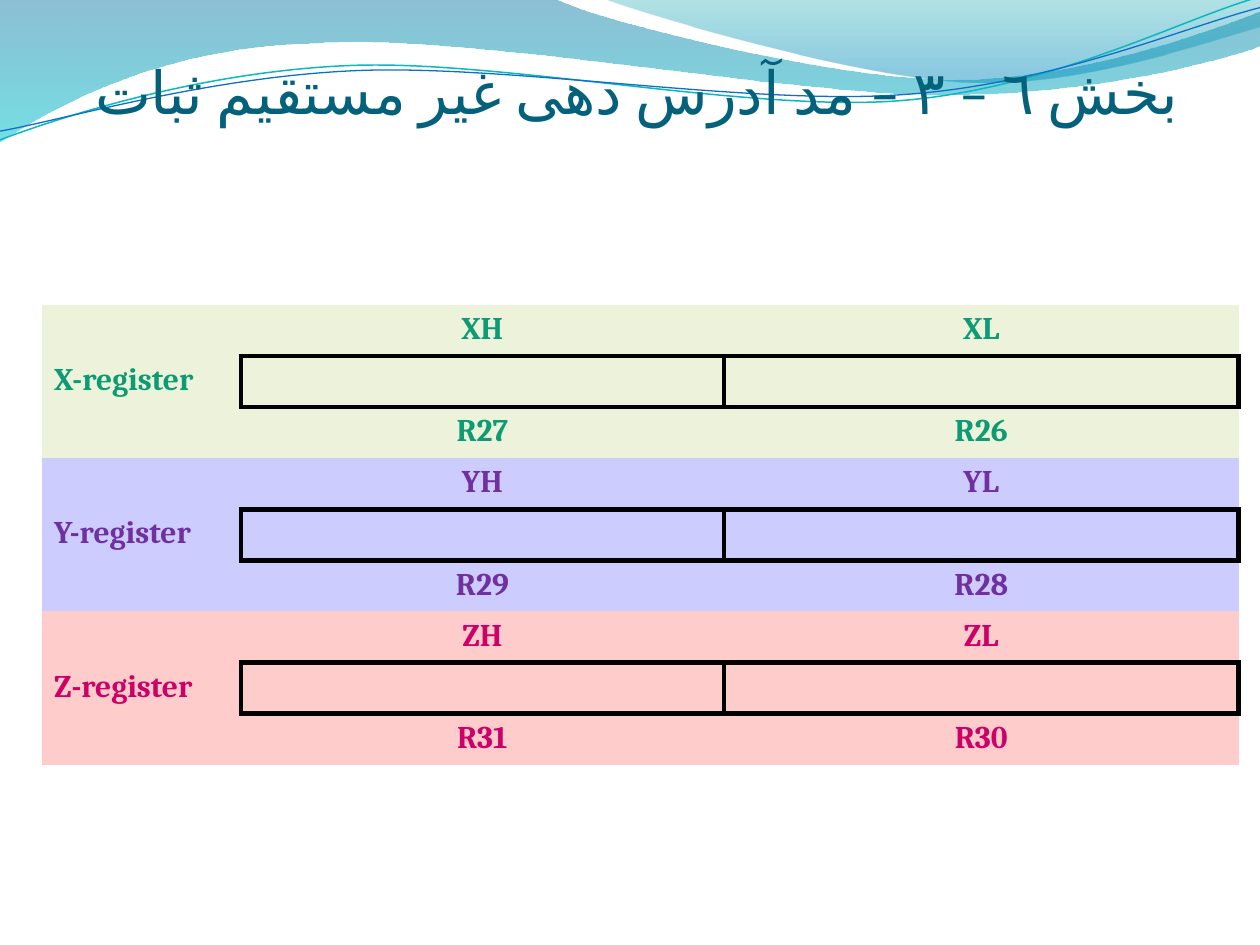
from math import cos, radians, sin

from lxml.etree import SubElement
from pptx import Presentation
from pptx.dml.color import RGBColor
from pptx.enum.text import MSO_ANCHOR, PP_ALIGN
from pptx.oxml.ns import qn
from pptx.util import Inches, Pt

BLACK = RGBColor(0x00, 0x00, 0x00)
TITLE = RGBColor(0x04, 0x61, 0x7B)
CYAN_LINE = RGBColor(0x0A, 0xB8, 0xBF)
BLUE_LINE = RGBColor(0x0F, 0x6F, 0xC6)
DEEP_BLUE = RGBColor(0x00, 0x74, 0xA1)
CYAN = RGBColor(0x00, 0xC6, 0xCF)
TEAL = RGBColor(0x00, 0xA1, 0xA9)
SKY = RGBColor(0x00, 0x8B, 0xBF)

REGISTERS = [
    ("X", "R27", "R26", RGBColor(0x0C, 0x9B, 0x74), RGBColor(0xED, 0xF3, 0xDB)),
    ("Y", "R29", "R28", RGBColor(0x70, 0x30, 0xA0), RGBColor(0xCC, 0xCC, 0xFF)),
    ("Z", "R31", "R30", RGBColor(0xCC, 0x00, 0x66), RGBColor(0xFF, 0xCC, 0xCC)),
]
COLUMN_SHARES = (1.58, 3.83, 4.08)
EDGES = {"a:lnL": (0, -1), "a:lnR": (0, 1), "a:lnT": (-1, 0), "a:lnB": (1, 0)}
CURVE_TILT = -2.7

BACK_WAVE = [
    (0, 0), (4.4, -0.01),
    (4.76, 0.17, 6.64, 0.63, 7.58, 0.63), (8.53, 0.63, 9.58, 0.26, 10, 0.09),
    (10.01, 0.36),
    (9.83, 0.44, 8.7, 0.76, 7.46, 0.75), (6.22, 0.75, 3.82, 0.28, 2.57, 0.34),
    (1.29, 0.36, 0.46, 0.83, -0.01, 1.13), (0, 0),
]
FRONT_WAVE = [
    (4.79, -0.01),
    (5.09, 0.11, 6.82, 0.62, 7.69, 0.65), (8.56, 0.69, 9.61, 0.32, 10, 0.21),
    (10, 0), (4.79, -0.01),
]
CYAN_CURVE = [
    (0, 1.11),
    (0.48, 0.93, 1.58, 0.57, 2.77, 0.52), (3.95, 0.47, 5.93, 0.89, 7.13, 0.8),
    (8.33, 0.71, 9.38, 0.15, 9.98, -0.02),
]
BLUE_CURVE = [
    (0, 1.04),
    (0.47, 0.96, 1.64, 0.61, 2.83, 0.56), (4.03, 0.51, 5.97, 0.84, 7.17, 0.75),
    (8.36, 0.67, 9.41, 0.21, 10, 0.06),
]


def write_text(tf, text, font="Cambria", size=18, color=BLACK, bold=False,
               align=PP_ALIGN.LEFT, lang=None):
    p = tf.paragraphs[0]
    p.alignment = align
    r = p.add_run()
    r.text = text
    r.font.name = font
    r.font.size = Pt(size)
    r.font.bold = bold
    r.font.color.rgb = color
    if lang:
        p._p.get_or_add_pPr().set("rtl", "1")
        rPr = r._r.get_or_add_rPr()
        rPr.set("lang", lang)
        SubElement(rPr, qn("a:cs"), typeface=font)


def turn(point, center, degrees):
    angle = radians(degrees)
    dx, dy = point[0] - center[0], point[1] - center[1]
    return (center[0] + dx * cos(angle) - dy * sin(angle),
            center[1] + dx * sin(angle) + dy * cos(angle))


def add_outline(s, box, segments, close, tilt=0, center=(0, 0)):
    left, top, width, _ = box
    unit = width / 10
    points = [turn(seg[i:i + 2], center, -tilt)
              for seg in segments for i in range(0, len(seg), 2)]
    points = [(left + x * unit, top + y * unit) for x, y in points]
    builder = s.shapes.build_freeform(*points[0], scale=1.0)
    builder.add_line_segments(points[1:], close=close)
    sp = builder.convert_to_shape()
    sp.rotation = tilt
    sp.shadow.inherit = False
    lines = iter(list(sp._element.iter(qn("a:lnTo"))))
    for seg in segments[1:]:
        line = next(lines)
        if len(seg) == 6:
            bezier = line.makeelement(qn("a:cubicBezTo"))
            line.addprevious(bezier)
            for part in (line, next(lines), next(lines)):
                bezier.append(part[0])
                part.getparent().remove(part)
    return sp


def add_wave(s, box, segments, stops):
    sp = add_outline(s, box, segments, close=True)
    sp.line.fill.background()
    sp.fill.gradient()
    sp.fill.gradient_angle = 270
    for stop, (position, color, _) in zip(sp.fill.gradient_stops, stops):
        stop.position = position
        stop.color.rgb = color
    colors = sp._element.spPr.iter(qn("a:srgbClr"))
    for element, (_, _, opacity) in zip(colors, stops):
        SubElement(element, qn("a:alpha"), val=str(opacity * 1000))


def add_curve(s, box, segments, color, width, center):
    sp = add_outline(s, box, segments, False, CURVE_TILT, center)
    sp.fill.background()
    sp.line.color.rgb = color
    sp.line.width = Pt(width)


def add_header(s, box):
    add_wave(s, box, BACK_WAVE, [(0, DEEP_BLUE, 45), (1, CYAN, 55)])
    add_wave(s, box, FRONT_WAVE, [(0, TEAL, 30), (0.8, SKY, 45)])
    add_curve(s, box, CYAN_CURVE, CYAN_LINE, 0.85, (4.99, 0.57))
    add_curve(s, box, BLUE_CURVE, BLUE_LINE, 0.75, (4.99, 0.59))


def is_boxed(row, col):
    return row % 3 == 1 and 1 <= col <= 2


def set_borders(cell, row, col):
    tcPr = cell._tc.get_or_add_tcPr()
    for tag, (dr, dc) in EDGES.items():
        ln = SubElement(tcPr, qn(tag), w=str(Pt(3)))
        if is_boxed(row, col) or is_boxed(row + dr, col + dc):
            fill = SubElement(ln, qn("a:solidFill"))
            SubElement(fill, qn("a:srgbClr"), val=str(BLACK))
        else:
            SubElement(ln, qn("a:noFill"))


def add_registers(s, box):
    table = s.shapes.add_table(3 * len(REGISTERS), 3, *box).table
    table.first_row = table.horz_banding = False
    for column, share in zip(table.columns, COLUMN_SHARES):
        column.width = int(box[2] * share / sum(COLUMN_SHARES))
    for i, (name, high, low, color, fill) in enumerate(REGISTERS):
        rows = [("", name + "H", name + "L"),
                (name + "-register", "", ""),
                ("", high, low)]
        for row, texts in enumerate(rows, start=3 * i):
            for col, text in enumerate(texts):
                cell = table.cell(row, col)
                set_borders(cell, row, col)
                cell.fill.solid()
                cell.fill.fore_color.rgb = fill
                if text:
                    write_text(cell.text_frame, text, color=color, bold=True,
                               align=PP_ALIGN.CENTER if col else PP_ALIGN.LEFT)


def add_title(s, box):
    tf = s.shapes.add_textbox(*box).text_frame
    tf.word_wrap = True
    tf.vertical_anchor = MSO_ANCHOR.MIDDLE
    tf.margin_left = tf.margin_right = tf.margin_bottom = 0
    tf.margin_top = Inches(0.05)
    write_text(tf, "بخش ٦ – ٣ – مد آدرس دهی غیر مستقیم ثبات ", font="Calibri",
               size=34, color=TITLE, align=PP_ALIGN.CENTER, lang="fa-IR")


def main():
    prs = Presentation()
    prs.slide_width, prs.slide_height = Inches(10), Inches(7.5)
    s = prs.slides.add_slide(prs.slide_layouts[6])
    add_header(s, (0, 0, prs.slide_width, Inches(1.14)))
    add_registers(s, (Inches(0.33), Inches(2.42), Inches(9.5), Inches(3.65)))
    add_title(s, (Inches(0.5), Inches(0.33), Inches(9), Inches(0.73)))
    prs.save("out.pptx")


if __name__ == "__main__":
    main()
